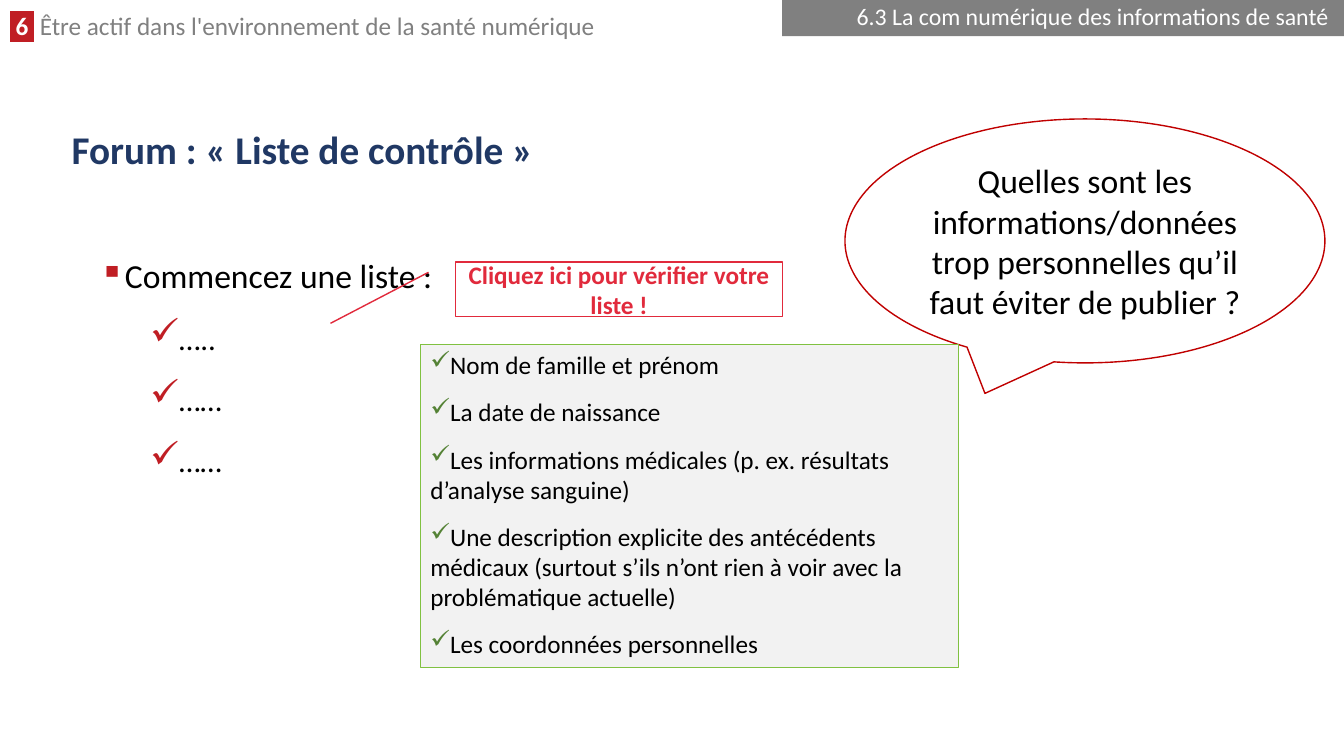
from lxml import etree
from pptx import Presentation
from pptx import util as u
from pptx.dml.color import RGBColor
from pptx.enum import shapes, text
from pptx.oxml import ns

RED = RGBColor(0xC0, 0x1E, 0x24)
DARK_RED = RGBColor(0xC0, 0x00, 0x00)
HINT_RED = RGBColor(0xE1, 0x2A, 0x3C)
NAVY = RGBColor(0x20, 0x38, 0x64)
GREY = RGBColor(0x80, 0x80, 0x80)
PALE_GREY = RGBColor(0xF2, 0xF2, 0xF2)
LIME = RGBColor(0x80, 0xC1, 0x41)
GREEN = RGBColor(0x54, 0x82, 0x35)
BLACK = RGBColor(0, 0, 0)
WHITE = RGBColor(0xFF, 0xFF, 0xFF)
LEFT, CENTER, RIGHT = text.PP_ALIGN.LEFT, text.PP_ALIGN.CENTER, text.PP_ALIGN.RIGHT

deck = Presentation()
deck.slide_width, deck.slide_height = u.Inches(13.33), u.Inches(7.5)
page = deck.slides.add_slide(deck.slide_layouts[5])


def share(left, top, width, height):
    """Turn percentages of the slide into lengths."""
    sides = (deck.slide_width, deck.slide_height) * 2
    return [round(side * part / 100) for side, part in zip(sides, (left, top, width, height))]


def style(para, size, color, bold=False, align=LEFT, bullet=None):
    """Format a paragraph; bullet is (symbol, colour, size %, left, hanging)."""
    para.alignment = align
    if bullet:
        symbol, bullet_color, percent, left, hanging = bullet
        props = para._p.get_or_add_pPr()
        props.set("marL", str(u.Inches(left)))
        props.set("indent", str(-u.Inches(hanging)))
        holder = etree.SubElement(props, ns.qn("a:buClr"))
        etree.SubElement(holder, ns.qn("a:srgbClr"), val=str(bullet_color))
        etree.SubElement(props, ns.qn("a:buSzPct"), val=str(percent * 1000))
        etree.SubElement(props, ns.qn("a:buChar"), char=symbol)
        para.space_before = para.space_after = u.Pt(6)
    para.font.name, para.font.size, para.font.bold = "Calibri", u.Pt(size), bold
    para.font.color.rgb = color


# Chapter heading, with its number on a red highlight
chapter = page.shapes.add_textbox(*share(0, 1.47, 71.4, 4.67)).text_frame
chapter.word_wrap = True
para = chapter.paragraphs[0]
para.line_spacing = 0.8
style(para, 18, GREY)
number = para.add_run()
number.text = " 6 "
number.font.bold = True
number.font.color.rgb = WHITE
highlight = etree.Element(ns.qn("a:highlight"))
etree.SubElement(highlight, ns.qn("a:srgbClr"), val=str(RED))
number.font._element.find(ns.qn("a:solidFill")).addnext(highlight)
para.add_run().text = " Être actif dans l'environnement de la santé numérique"

# Title
title = page.shapes.title
title.left, title.top, title.width, title.height = share(4.58, 15.73, 90.77, 8.8)
title.text_frame.text = "Forum : « Liste de contrôle »"
title.text_frame.vertical_anchor = text.MSO_ANCHOR.MIDDLE
title.text_frame.paragraphs[0].line_spacing = 0.9
style(title.text_frame.paragraphs[0], 28, NAVY, bold=True)

# Learner's own list
own_list = page.shapes.add_textbox(*share(6.68, 30.93, 59.64, 62.67)).text_frame
own_list.word_wrap = True
own_list.text = "Commencez une liste :\n…..\n……\n……"
for row, para in enumerate(own_list.paragraphs):
    para.line_spacing = 1.2
    if row:
        para.level = 1
        style(para, 22, BLACK, bullet=("✓", RED, 120, 0.75, 0.25))
    else:
        style(para, 24, BLACK, bullet=("▪", RED, 100, 0.25, 0.25))
own_list.paragraphs[0].space_before = u.Pt(0)
own_list.margin_top = u.Inches(0.13)

# Filled shapes: preset, place, fill, line, line width, text, size, colour, bold, align
kinds = shapes.MSO_SHAPE
answers = "\n".join([
    "Nom de famille et prénom",
    "La date de naissance",
    "Les informations médicales (p. ex. résultats d’analyse sanguine)",
    "Une description explicite des antécédents médicaux "
    "(surtout s’ils n’ont rien à voir avec la problématique actuelle)",
    "Les coordonnées personnelles",
])
panels = [
    (kinds.OVAL_CALLOUT, (62.87, 15.73, 35.71, 32.27), WHITE, DARK_RED, 1,
     "Quelles sont les informations/données trop personnelles qu’il faut éviter de publier ?",
     24, BLACK, False, CENTER),
    (kinds.RECTANGLE, (58.2, 0, 41.8, 4.8), GREY, None, 0,
     "6.3 La com numérique des informations de santé ", 17, WHITE, False, RIGHT),
    (kinds.RECTANGLE, (31.28, 45.6, 40.06, 42.67), PALE_GREY, LIME, 0.75,
     answers, 18, BLACK, False, LEFT),
    (kinds.LINE_CALLOUT_1, (33.91, 34.67, 24.3, 7.2), WHITE, HINT_RED, 1,
     "Cliquez ici pour vérifier votre liste !", 18, HINT_RED, True, CENTER),
]
for kind, place, fill, line, width, words, size, color, bold, align in panels:
    panel = page.shapes.add_shape(kind, *share(*place))
    panel.shadow.inherit = False
    panel.fill.solid()
    panel.fill.fore_color.rgb = fill
    if line is None:
        panel.line.fill.background()
    else:
        panel.line.color.rgb = line
        panel.line.width = u.Pt(width)
    frame = panel.text_frame
    frame.word_wrap = True
    frame.vertical_anchor = text.MSO_ANCHOR.MIDDLE
    frame.text = words
    is_list = words == answers
    for para in frame.paragraphs:
        para.level = int(is_list)
        style(para, size, color, bold, align, ("✓", GREEN, 100, 0, 0) if is_list else None)
    if is_list:
        frame.vertical_anchor = text.MSO_ANCHOR.TOP
        frame.paragraphs[0].space_before = u.Pt(0)
    if align == RIGHT:
        frame.paragraphs[0].line_spacing = 0.9

deck.save("out.pptx")
